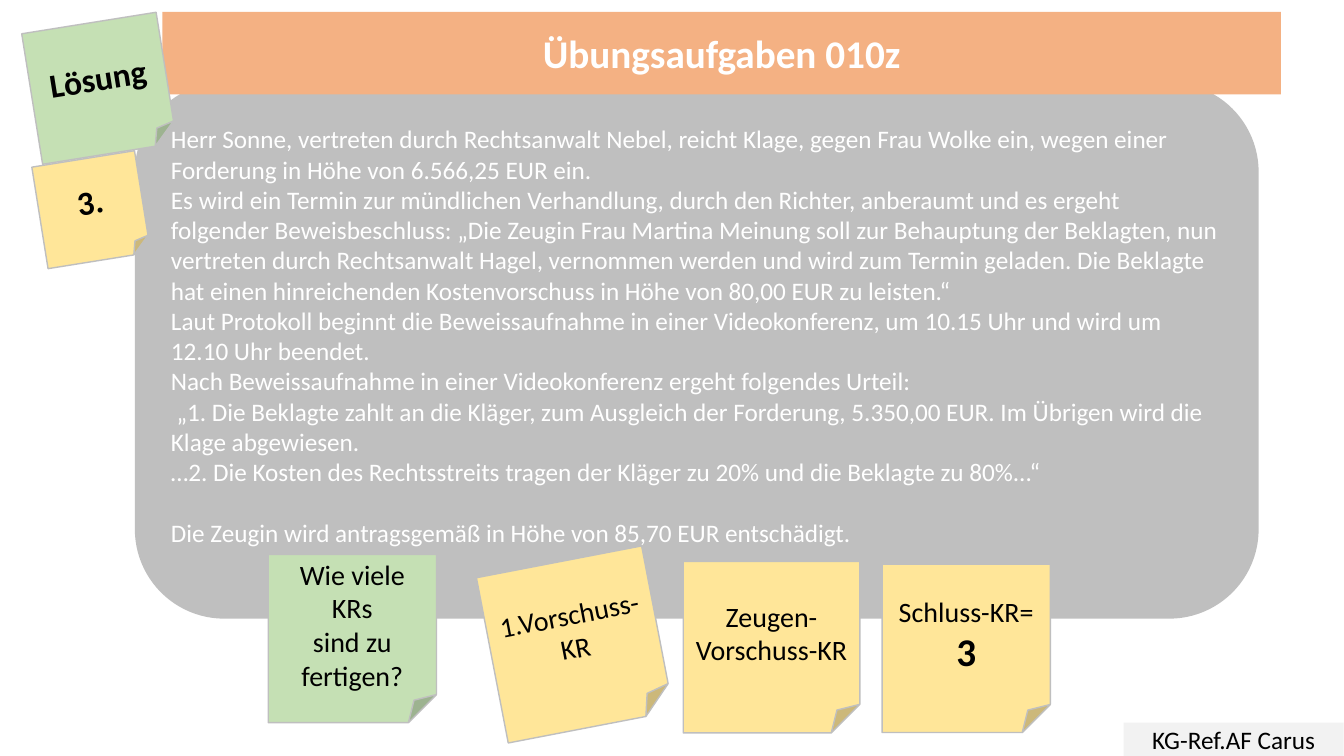
from lxml.etree import SubElement
from pptx import Presentation
from pptx.dml.color import RGBColor
from pptx.enum.shapes import MSO_SHAPE as Preset
from pptx.enum.text import MSO_ANCHOR as Anchor, MSO_AUTO_SIZE as AutoSize, PP_ALIGN as Align
from pptx.oxml.ns import qn
from pptx.util import Cm, Pt

WHITE = RGBColor(0xFF, 0xFF, 0xFF)
BLACK = RGBColor(0x00, 0x00, 0x00)
GREY = RGBColor(0xBF, 0xBF, 0xBF)
PALE = RGBColor(0xF2, 0xF2, 0xF2)
ORANGE = RGBColor(0xF4, 0xB1, 0x83)
GREEN = RGBColor(0xC5, 0xE0, 0xB4)
YELLOW = RGBColor(0xFF, 0xE6, 0x99)

TITLE = "Übungsaufgaben 010z"
TITLE_AREA = (4.09, 0.3, 28.19, 2.08)
CASE = [
    "Herr Sonne, vertreten durch Rechtsanwalt Nebel, reicht Klage, gegen Frau Wolke ein, "
    "wegen einer Forderung in Höhe von 6.566,25 EUR ein.",
    "Es wird ein Termin zur mündlichen Verhandlung, durch den Richter, anberaumt und es ergeht "
    "folgender Beweisbeschluss: „Die Zeugin Frau Martina Meinung soll zur Behauptung der Beklagten, "
    "nun vertreten durch Rechtsanwalt Hagel, vernommen werden und wird zum Termin geladen. "
    "Die Beklagte hat einen hinreichenden Kostenvorschuss in Höhe von 80,00 EUR zu leisten.“",
    "Laut Protokoll beginnt die Beweissaufnahme in einer Videokonferenz, um 10.15 Uhr "
    "und wird um 12.10 Uhr beendet.",
    "Nach Beweissaufnahme in einer Videokonferenz ergeht folgendes Urteil:",
    " „1. Die Beklagte zahlt an die Kläger, zum Ausgleich der Forderung, 5.350,00 EUR. "
    "Im Übrigen wird die Klage abgewiesen.",
    "…2. Die Kosten des Rechtsstreits tragen der Kläger zu 20% und die Beklagte zu 80%...“",
    "Die Zeugin wird antragsgemäß in Höhe von 85,70 EUR entschädigt.",
]
CASE_AREA = (3.4, 2.08, 28.32, 13.51)
REFERENCE = "KG-Ref.AF Carus"
REFERENCE_AREA = (28.32, 18.21, 5.54, 0.84)

HEADING = {"size": Pt(28), "bold": True}
LABEL = {"size": Pt(24), "bold": True}
PLAIN = {"size": Pt(20), "bold": False}
SMALL = {"size": Pt(18), "bold": False}

NOTES = [
    ((0.79, 0.56, 3.43, 3.33), -9.1, GREEN, [[("Lösung", LABEL)]]),
    ((0.99, 3.99, 2.62, 2.59), -9.1, YELLOW, [[("3.", LABEL)]]),
    ((6.76, 13.97, 4.24, 4.24), 0, GREEN,
     [[(line, PLAIN)] for line in ("Wie viele", "KRs", "sind zu fertigen?")]),
    ((12.37, 14.12, 4.24, 4.24), -10.9, YELLOW, [[("1.Vorschuss-KR", PLAIN)]]),
    ((17.22, 14.15, 4.45, 4.32), 0, YELLOW, [[("Zeugen-Vorschuss-KR", PLAIN)]]),
    ((22.23, 14.22, 4.24, 4.24), 0, YELLOW, [[("Schluss-KR= ", PLAIN), ("3", HEADING)]]),
]


def apply(target, values):
    """Set every attribute named in values on target."""
    for name, value in values.items():
        setattr(target, name, value)


def place(shape, area):
    """Move and size a shape to an area given in centimetres."""
    apply(shape, dict(zip(("left", "top", "width", "height"), map(Cm, area))))


def paint(shape, color):
    """Fill a shape with one solid colour."""
    shape.fill.solid()
    shape.fill.fore_color.rgb = color


def write(shape, paragraphs, color, align=Align.CENTER):
    """Write paragraphs of formatted spans into a shape."""
    frame = shape.text_frame
    apply(frame, {"word_wrap": True, "vertical_anchor": Anchor.MIDDLE, "auto_size": AutoSize.NONE})
    for index, spans in enumerate(paragraphs):
        para = frame.add_paragraph() if index else frame.paragraphs[0]
        para.alignment = align
        for text, style in spans:
            span = para.add_run()
            span.text = text
            apply(span.font, {"name": "Calibri", **style})
            span.font.color.rgb = color


def add_box(page, preset, area, color):
    """Add a flat filled shape without an outline."""
    box = page.shapes.add_shape(preset, *map(Cm, area))
    box.shadow.inherit = False
    paint(box, color)
    box.line.fill.background()
    return box


def add_case(page):
    """Add the case text, with a one-line gap before its last paragraph and below it."""
    box = add_box(page, Preset.ROUNDED_RECTANGLE, CASE_AREA, GREY)
    write(box, [[(text, SMALL)] for text in CASE], WHITE, Align.LEFT)
    box.text_frame.margin_bottom = Cm(0.89)
    box.text_frame.paragraphs[-1].space_before = Pt(21.6)


def add_title(page):
    """Turn the title placeholder into a rounded banner above the case text."""
    title = page.shapes.title
    place(title, TITLE_AREA)
    outline = SubElement(title.element.spPr, qn("a:prstGeom"), prst="roundRect")
    SubElement(outline, qn("a:avLst"))
    paint(title, ORANGE)
    write(title, [[(TITLE, HEADING)]], WHITE)
    page.shapes.element.append(title.element)


def add_note(page, area, angle, color, paragraphs):
    """Add a sticky note with a folded corner."""
    note = add_box(page, Preset.FOLDED_CORNER, area, color)
    note.rotation = angle
    note.line.color.rgb = GREY
    note.line.width = Pt(1)
    write(note, paragraphs, BLACK)


def main():
    """Build the exercise slide and save it."""
    deck = Presentation()
    apply(deck, {"slide_width": Cm(33.87), "slide_height": Cm(19.05)})
    page = deck.slides.add_slide(deck.slide_layouts.get_by_name("Title Only"))
    add_case(page)
    add_title(page)
    write(add_box(page, Preset.RECTANGLE, REFERENCE_AREA, PALE), [[(REFERENCE, SMALL)]], BLACK)
    for note in NOTES:
        add_note(page, *note)
    deck.save("out.pptx")


if __name__ == "__main__":
    main()
